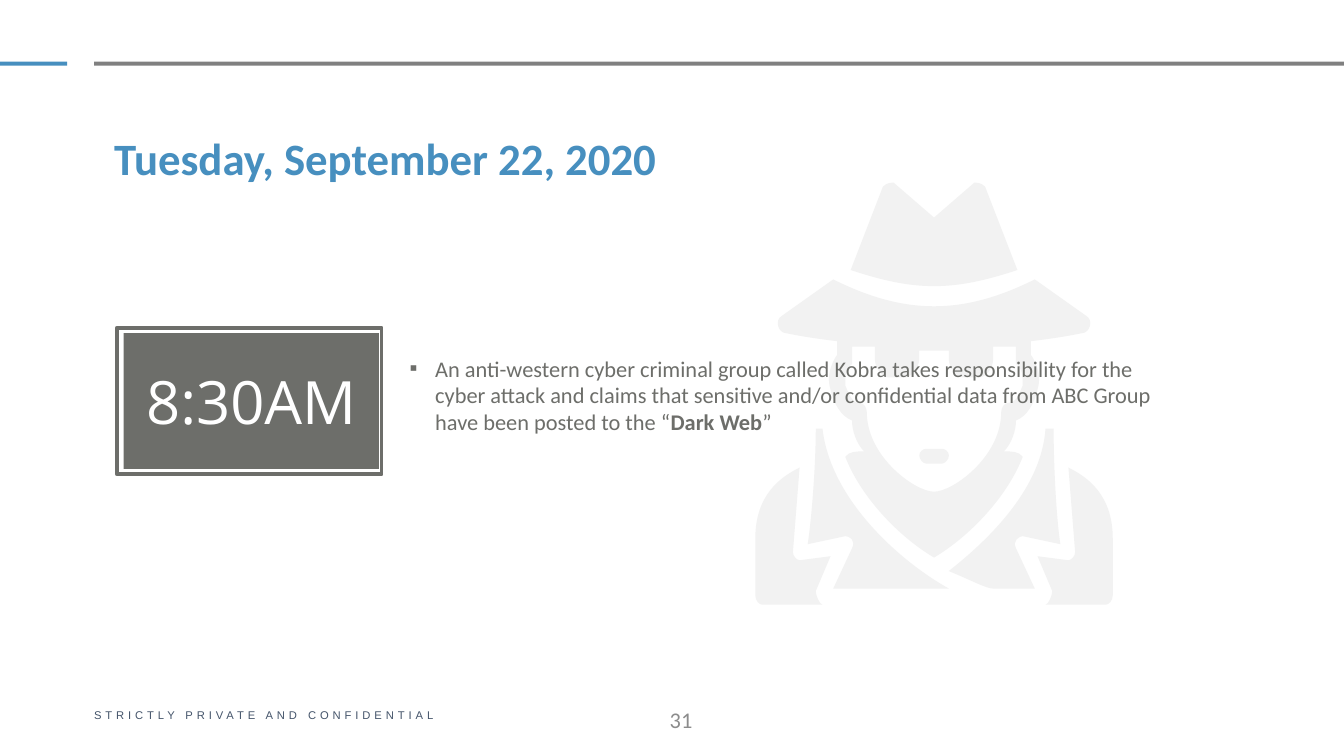
from lxml.etree import SubElement
from pptx import Presentation
from pptx.dml.color import RGBColor
from pptx.enum.shapes import MSO_SHAPE
from pptx.enum.text import MSO_ANCHOR, MSO_AUTO_SIZE, PP_ALIGN
from pptx.oxml.ns import qn
from pptx.util import Pt

PX = 9144  # EMU per px, 100 px to the inch
WIDTH, HEIGHT = 1000, 550

BLUE = RGBColor(0x47, 0x8F, 0xBF)
RULE_GREY = RGBColor(0x80, 0x80, 0x80)
TEXT_GREY = RGBColor(0x6D, 0x6E, 0x6A)
NUMBER_GREY = RGBColor(0x8C, 0x8C, 0x8C)
ICON_GREY = RGBColor(0xF2, 0xF2, 0xF2)
NAVY = RGBColor(0x44, 0x54, 0x6A)
WHITE = RGBColor(0xFF, 0xFF, 0xFF)

# Outlines of the spy: x from the vertical axis, y from the hat's top.
# Two numbers draw a line, six a Bézier curve.
# Right halves, from the axis at the top to the axis at the bottom:
MOUTH = [(0, 198), (6, 198), (8, 198, 11, 200, 11, 203),
         (11, 206, 8, 209, 6, 209), (0, 209)]
CROWN = [(0, 26), (30, 0), (32, 0, 35, 0, 38, 3), (62, 65),
         (38, 73, 19, 77, 0, 77)]
BRIM_AND_HEAD = [
    (0, 92), (23, 92, 47, 86, 75, 72), (113, 99), (119, 102, 116, 112, 110, 112),
    (110, 112, 97, 115, 72, 118), (72, 128), (77, 135, 80, 145, 77, 154),
    (75, 164, 69, 174, 61, 177), (61, 184, 58, 194, 52, 200),
    (58, 200, 63, 200, 66, 204), (55, 233, 27, 263, 0, 279)]
FACE = [
    (0, 125), (11, 125), (11, 131), (11, 138, 17, 145, 22, 145), (33, 145),
    (39, 145, 44, 138, 44, 131), (44, 122), (61, 122), (61, 135),
    (66, 138, 66, 145, 66, 151), (63, 158, 61, 164, 55, 164),
    (52, 164, 50, 168, 50, 171), (50, 204, 14, 230, 0, 230)]
# Whole outlines:
RIGHT_LAPEL = [
    (66, 263), (94, 269), (91, 249, 89, 210, 89, 183), (83, 183),
    (80, 226, 44, 263, 11, 289), (28, 296, 39, 302, 44, 302), (75, 302),
    (61, 272), (58, 266, 64, 263, 66, 263)]
LEFT_LAPEL = [
    (-83, 183), (-88, 183), (-88, 210, -91, 249, -94, 269), (-66, 263),
    (-63, 263, -58, 266, -61, 272), (-75, 302), (11, 302),
    (-25, 282, -77, 236, -83, 183)]
SHOULDER = [
    (100, 212), (105, 275), (105, 278, 102, 281, 100, 281), (77, 278), (88, 304),
    (88, 307, 85, 314, 83, 314), (128, 314), (130, 314, 133, 311, 133, 307),
    (133, 265), (133, 232, 114, 219, 100, 212)]


def mirror(outline):
    """Reflect an outline in the axis and run it backwards."""
    x, y = outline[-1][-2:]
    reflected = [(-x, y)]
    for segment, previous in zip(outline[:0:-1], outline[-2::-1]):
        x, y = previous[-2:]
        controls = ()
        if len(segment) == 6:
            x1, y1, x2, y2 = segment[:4]
            controls = (-x2, y2, -x1, y1)
        reflected.append(controls + (-x, y))
    return reflected


def symmetric(half):
    return half + mirror(half)[1:]


def paint(shape, fill=None, line=None, line_width=2):
    shape.shadow.inherit = False
    if fill is None:
        shape.fill.background()
    else:
        shape.fill.solid()
        shape.fill.fore_color.rgb = fill
    if line is None:
        shape.line.fill.background()
    else:
        shape.line.color.rgb = line
        shape.line.width = Pt(line_width)


def add_rect(slide, left, top, width, height, **paints):
    rect = slide.shapes.add_shape(MSO_SHAPE.RECTANGLE, left * PX, top * PX,
                                  width * PX, height * PX)
    paint(rect, **paints)
    return rect


def add_text_frame(slide, left, top, width, height, anchor=MSO_ANCHOR.TOP):
    frame = slide.shapes.add_textbox(left * PX, top * PX, width * PX,
                                     height * PX).text_frame
    frame.word_wrap = True
    frame.vertical_anchor = anchor
    return frame


def set_font(paragraph, name, size, color, bold=None):
    font = paragraph.font
    font.name, font.size, font.bold = name, Pt(size), bold
    font.color.rgb = color


def add_rules(slide, top):
    add_rect(slide, 0, top, 50, 3, fill=BLUE)
    add_rect(slide, 70, top, WIDTH - 70, 3, fill=RULE_GREY)


def add_outline(shapes, axis, top, contours):
    """Draw contours as one freeform, then bend its curved segments."""
    def place(x, y):
        return (axis + x) * PX, (top + y) * PX

    ends = [[place(*segment[-2:]) for segment in contour] for contour in contours]
    builder = shapes.build_freeform(*ends[0][0])
    builder.add_line_segments(ends[0][1:])
    for hole in ends[1:]:
        builder.move_to(*hole[0])
        builder.add_line_segments(hole[1:])
    shape = builder.convert_to_shape()
    paint(shape, fill=ICON_GREY)

    segments = [segment for contour in contours for segment in contour[1:]]
    lines = list(shape._element.iter(qn("a:lnTo")))
    for line, segment in zip(lines, segments):
        if len(segment) == 6:
            curve = line.makeelement(qn("a:cubicBezTo"))
            for i in (0, 2, 4):
                x, y = place(*segment[i:i + 2])
                SubElement(curve, qn("a:pt"), x=str(x - shape.left),
                           y=str(y - shape.top))
            line.getparent().replace(line, curve)


def add_spy(slide, left, top):
    spy = slide.shapes.add_group_shape()
    parts = [
        [symmetric(MOUTH)], [symmetric(CROWN)], [RIGHT_LAPEL], [LEFT_LAPEL],
        [symmetric(BRIM_AND_HEAD), symmetric(FACE)],
        [mirror(SHOULDER)], [SHOULDER],
    ]
    for contours in parts:
        add_outline(spy.shapes, left + 133, top, contours)


def add_title(slide, left, top, width, height):
    title = slide.shapes.title
    title.left, title.top = left * PX, top * PX
    title.width, title.height = width * PX, height * PX
    frame = title.text_frame
    frame.text = "Tuesday, September 22, 2020"
    frame.auto_size = MSO_AUTO_SIZE.NONE
    frame.vertical_anchor = MSO_ANCHOR.TOP
    paragraph = frame.paragraphs[0]
    paragraph.alignment = PP_ALIGN.LEFT
    paragraph.line_spacing = 1.1
    set_font(paragraph, "Calibri", 24, BLUE, bold=True)


def add_time(slide, left, top, width, height):
    """A filled time plate inside a thin frame."""
    plate = add_rect(slide, left + 5, top + 4, width - 7, height - 8, fill=TEXT_GREY)
    plate.text_frame.text = "8:30AM"
    plate.text_frame.vertical_anchor = MSO_ANCHOR.MIDDLE
    paragraph = plate.text_frame.paragraphs[0]
    paragraph.alignment = PP_ALIGN.CENTER
    set_font(paragraph, "Open Sans", 32, WHITE)
    add_rect(slide, left, top, width, height, line=TEXT_GREY)


def add_event(slide, left, top, width, height):
    paragraph = add_text_frame(slide, left, top, width, height).paragraphs[0]
    paragraph.level = 1
    properties = paragraph._p.get_or_add_pPr()
    properties.set("marL", str(19 * PX))
    properties.set("indent", str(-19 * PX))
    SubElement(properties, qn("a:buFont"), typeface="Arial")
    SubElement(properties, qn("a:buChar"), char="▪")
    paragraph.space_after = Pt(3)
    set_font(paragraph, "Calibri", 12, TEXT_GREY)
    paragraph.add_run().text = (
        "An anti-western cyber criminal group called Kobra takes responsibility "
        "for the cyber attack and claims that sensitive and/or confidential data "
        "from ABC Group have been posted to the “")
    dark_web = paragraph.add_run()
    dark_web.text = "Dark Web"
    dark_web.font.bold = True
    paragraph.add_run().text = "”"


def add_footer(slide, left, top):
    notice = add_text_frame(slide, left, top + 1, 306, 20, MSO_ANCHOR.MIDDLE)
    notice.word_wrap = False
    notice.margin_left = notice.margin_right = 0
    notice.margin_top = notice.margin_bottom = 0
    notice.text = "STRICTLY PRIVATE AND CONFIDENTIAL"
    paragraph = notice.paragraphs[0]
    paragraph.line_spacing = 1.1
    set_font(paragraph, "Arial", 6, NAVY)
    paragraph.runs[0]._r.get_or_add_rPr().set("spc", "210")

    number = add_text_frame(slide, left + 230, top, 225, 29, MSO_ANCHOR.MIDDLE)
    number.text = "31"
    number.paragraphs[0].alignment = PP_ALIGN.RIGHT
    set_font(number.paragraphs[0], "Calibri", 12, NUMBER_GREY)


def main():
    presentation = Presentation()
    presentation.slide_width, presentation.slide_height = WIDTH * PX, HEIGHT * PX
    slide = presentation.slides.add_slide(presentation.slide_layouts[5])
    add_rules(slide, 46)
    add_spy(slide, 562, 136)
    add_event(slide, 295, 259, 586, 71)
    add_time(slide, 87, 244, 197, 109)
    add_title(slide, 75, 88, 847, 40)
    add_footer(slide, 70, 521)
    presentation.save("out.pptx")


if __name__ == "__main__":
    main()
